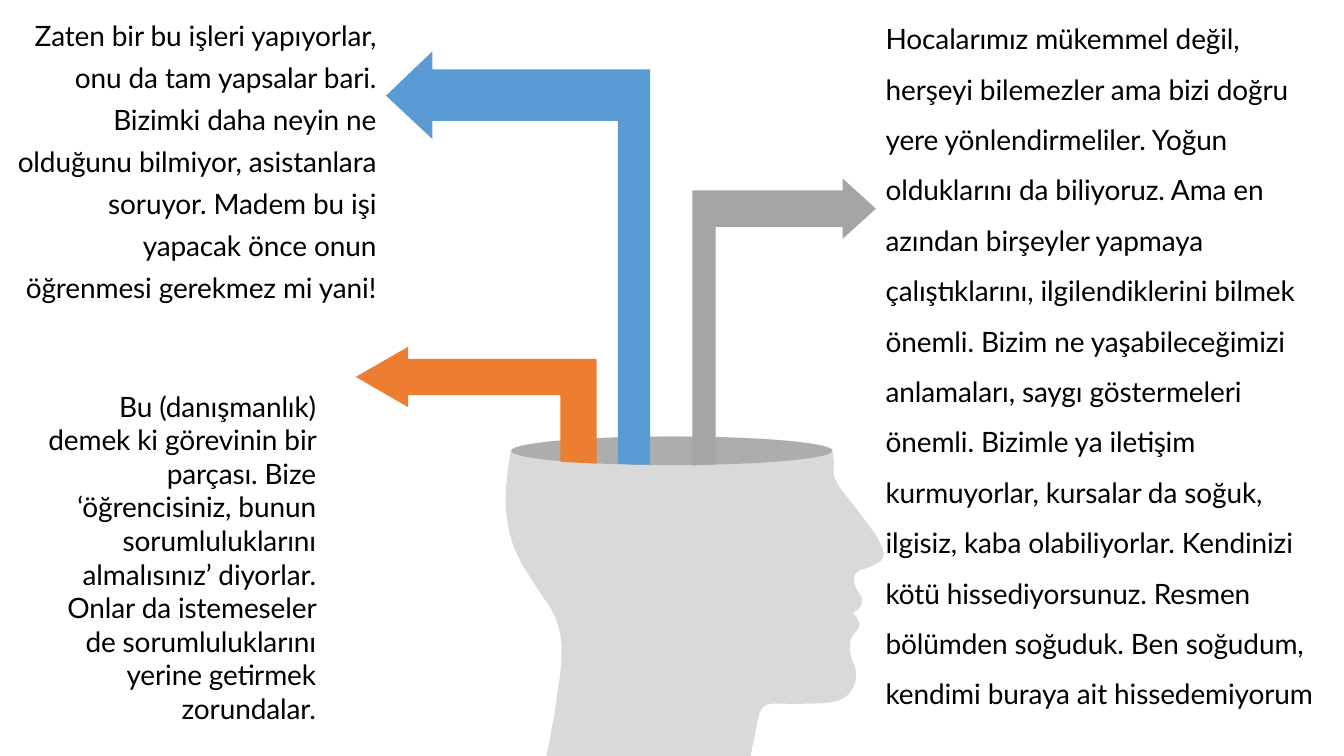
from lxml.etree import SubElement
from pptx import Presentation
from pptx.dml.color import RGBColor
from pptx.enum.shapes import MSO_SHAPE
from pptx.enum.text import MSO_AUTO_SIZE, PP_ALIGN
from pptx.oxml.ns import qn
from pptx.util import Cm, Pt

BLACK = RGBColor(0x00, 0x00, 0x00)
LIGHT_GRAY = RGBColor(0xD9, 0xD9, 0xD9)
GRAY = RGBColor(0xA5, 0xA5, 0xA5)
BLUE = RGBColor(0x5B, 0x9B, 0xD5)
ORANGE = RGBColor(0xED, 0x7D, 0x31)

FONT = "Lato"
UNITS_PER_CM = 100 / 2.54  # outline units

# text, left, top, width, height (cm), alignment, line spacing
QUOTES = [
    ("Zaten bir bu işleri yapıyorlar, onu da tam yapsalar bari. Bizimki daha "
     "neyin ne olduğunu bilmiyor, asistanlara soruyor. Madem bu işi yapacak "
     "önce onun öğrenmesi gerekmez mi yani!",
     0, 0.13, 9.73, 7.75, PP_ALIGN.RIGHT, 1.25),
    ("Hocalarımız mükemmel değil, herşeyi bilemezler ama bizi doğru yere "
     "yönlendirmeliler. Yoğun olduklarını da biliyoruz. Ama en azından "
     "birşeyler yapmaya çalıştıklarını, ilgilendiklerini bilmek önemli. Bizim "
     "ne yaşabileceğimizi anlamaları, saygı göstermeleri önemli. Bizimle ya "
     "iletişim kurmuyorlar, kursalar da soğuk, ilgisiz, kaba olabiliyorlar. "
     "Kendinizi kötü hissediyorsunuz. Resmen bölümden soğuduk. Ben soğudum, "
     "kendimi buraya ait hissedemiyorum",
     22.07, 0, 11.35, 19.33, PP_ALIGN.LEFT, 1.5),
    ("Bu (danışmanlık) demek ki görevinin bir parçası. Bize ‘öğrencisiniz, "
     "bunun sorumluluklarını almalısınız’ diyorlar. Onlar da istemeseler de "
     "sorumluluklarını yerine getirmek zorundalar.",
     0.84, 9.68, 7.37, 8.81, PP_ALIGN.RIGHT, Pt(24)),
]

# Outlines: a pair is a corner, six numbers are a Bézier segment
HEAD = [
    (876, 545), (876, 545, 876, 544, 875, 543), (873, 538, 871, 533, 867, 528),
    (857, 514, 845, 499, 834, 485), (832, 482, 830, 478, 828, 474),
    (827, 472, 827, 469, 827, 466), (828, 460, 827, 453, 826, 447),
    (826, 439, 755, 433, 667, 433), (580, 433, 510, 439, 507, 447),
    (505, 456, 504, 465, 503, 474), (503, 478, 502, 481, 502, 484),
    (501, 504, 503, 524, 510, 543), (512, 548, 515, 553, 517, 558),
    (525, 572, 534, 585, 542, 597), (546, 602, 548, 607, 551, 612),
    (555, 623, 558, 635, 557, 648), (557, 659, 556, 670, 554, 681),
    (552, 696, 550, 711, 547, 725), (546, 734, 544, 742, 542, 750),
    (745, 750), (745, 748, 746, 746, 746, 743),
    (749, 732, 750, 721, 753, 710), (756, 700, 760, 698, 771, 698),
    (781, 698, 791, 699, 800, 698), (810, 698, 819, 698, 828, 696),
    (837, 694, 844, 689, 847, 681), (850, 675, 850, 668, 848, 660),
    (846, 657, 845, 653, 844, 649), (842, 640, 843, 632, 850, 626),
    (853, 622, 854, 619, 851, 615), (851, 614, 850, 613, 850, 612),
    (849, 611, 847, 610, 846, 608), (854, 605, 859, 596, 852, 588),
    (850, 586, 849, 583, 848, 580), (846, 573, 847, 568, 855, 565),
    (860, 564, 865, 562, 870, 559), (876, 557, 878, 551, 876, 545),
]
ARROWS = [
    (BLUE, [(429, 69), (429, 51), (383, 95), (429, 138), (429, 120), (613, 120),
            (613, 460), (623, 461, 634, 461, 645, 461), (645, 69)]),
    (ORANGE, [(405, 356), (405, 344), (353, 374), (405, 404), (405, 392),
              (556, 392), (556, 458), (567, 459, 579, 459, 592, 460), (592, 356)]),
    (GRAY, [(869, 207), (836, 177), (836, 189), (687, 189), (687, 462),
            (695, 461, 703, 461, 710, 461), (710, 225), (836, 225), (836, 237)]),
]


def paint(shape, color):
    shape.shadow.inherit = False
    shape.fill.solid()
    shape.fill.fore_color.rgb = color
    shape.line.fill.background()


def add_outline(page, outline, color):
    """Draw the corners as a freeform, then bend its curved segments."""
    corners = [segment[-2:] for segment in outline]
    builder = page.shapes.build_freeform(*corners[0], scale=Cm(1) / UNITS_PER_CM)
    builder.add_line_segments(corners[1:], close=True)
    shape = builder.convert_to_shape()
    paint(shape, color)

    left = min(x for x, y in corners)
    top = min(y for x, y in corners)
    lines = list(shape._element.iter(qn("a:lnTo")))
    for line, segment in zip(lines, outline[1:]):
        if len(segment) == 6:
            line.tag = qn("a:cubicBezTo")
            end = line[0]
            for x, y in (segment[:2], segment[2:4]):
                end.addprevious(end.makeelement(
                    qn("a:pt"), {"x": str(x - left), "y": str(y - top)}))


def add_opening(page):
    """Shade the open top of the head."""
    opening = page.shapes.add_shape(
        MSO_SHAPE.OVAL, Cm(12.88), Cm(11), Cm(8.1), Cm(0.72))
    paint(opening, BLACK)
    color = opening.fill._xPr.find(qn("a:solidFill"))[0]
    SubElement(color, qn("a:alpha"), val="20000")


def add_quote(page, text, left, top, width, height, alignment, spacing):
    box = page.shapes.add_textbox(Cm(left), Cm(top), Cm(width), Cm(height))
    frame = box.text_frame
    frame.word_wrap = True
    frame.auto_size = MSO_AUTO_SIZE.SHAPE_TO_FIT_TEXT
    para = frame.paragraphs[0]
    para.alignment = alignment
    para.line_spacing = spacing
    para.font.name = FONT
    para.font.size = Pt(20)
    para.font.color.rgb = BLACK
    span = para.add_run()
    span.text = text
    span._r.get_or_add_rPr().set("spc", "-12")


def main():
    deck = Presentation()
    deck.slide_width, deck.slide_height = Cm(33.87), Cm(19.05)
    page = deck.slides.add_slide(deck.slide_layouts[6])
    add_outline(page, HEAD, LIGHT_GRAY)
    add_opening(page)
    for color, outline in ARROWS:
        add_outline(page, outline, color)
    for quote in QUOTES:
        add_quote(page, *quote)
    deck.save("out.pptx")


if __name__ == "__main__":
    main()
